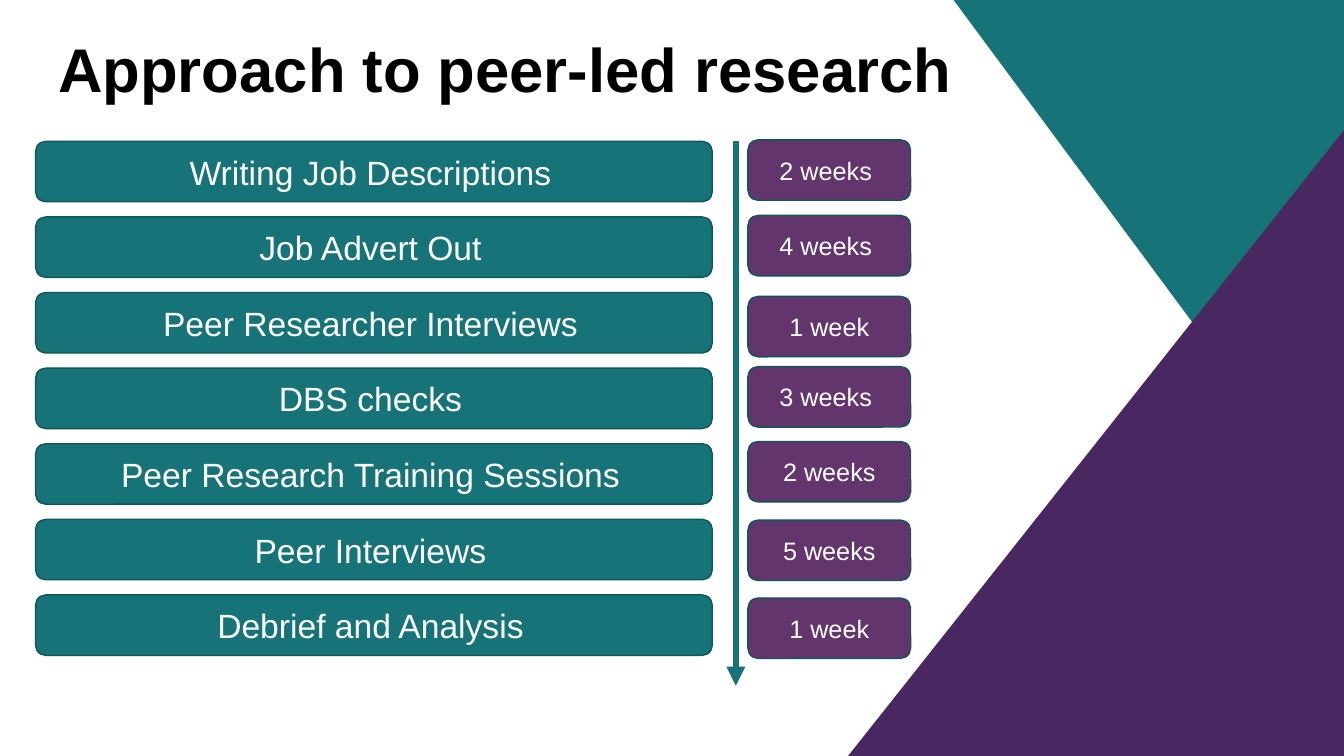
import pptx
import pptx.dml.color
import pptx.enum.shapes
import pptx.enum.text
import pptx.oxml.ns
import pptx.util
from lxml import etree

SHAPES = pptx.enum.shapes.MSO_SHAPE
ALIGN = pptx.enum.text.PP_ALIGN
TEAL, DARK_TEAL = "167378", "105559"
PLUM, INDIGO = "62356D", "492861"
WHITE, BLACK = "FFFFFF", "000000"


def colour(value):
    return pptx.dml.color.RGBColor.from_string(value)


class Board:
    font = "Arial"
    columns = 20
    rows = 10

    def __init__(self, deck):
        self.slide = deck.slides.add_slide(deck.slide_layouts[6])
        self.column = deck.slide_width / self.columns
        self.row = deck.slide_height / self.rows

    def x(self, columns):
        return round(columns * self.column)

    def y(self, rows):
        return round(rows * self.row)

    def box(self, left, top, width, height):
        return self.x(left), self.y(top), self.x(width), self.y(height)

    def paint(self, shape, fill, outline=None):
        shape.shadow.inherit = False
        shape.fill.solid()
        shape.fill.fore_color.rgb = colour(fill)
        if outline:
            shape.line.color.rgb = colour(outline)
            shape.line.width = pptx.util.Pt(1)
        else:
            shape.line.fill.background()

    def label(self, shape, runs, ink, align, bold=False):
        frame = shape.text_frame
        frame.word_wrap = True
        frame.vertical_anchor = pptx.enum.text.MSO_ANCHOR.MIDDLE
        paragraph = frame.paragraphs[0]
        paragraph.alignment = align
        for words, size in runs:
            run = paragraph.add_run()
            run.text = words
            run.font.name = self.font
            run.font.size = pptx.util.Pt(size)
            run.font.bold = bold
            run.font.color.rgb = colour(ink)
        return paragraph

    def corner(self, place, fill):
        triangle = self.slide.shapes.add_shape(SHAPES.RIGHT_TRIANGLE, *self.box(*place))
        triangle.rotation = 180
        self.paint(triangle, fill)

    def polygon(self, points, fill):
        start, *others = [(self.x(across), self.y(down)) for across, down in points]
        builder = self.slide.shapes.build_freeform(*start)
        builder.add_line_segments(others)
        self.paint(builder.convert_to_shape(), fill)

    def title(self, place, words):
        heading = self.slide.shapes.add_textbox(*self.box(*place))
        paragraph = self.label(heading, [(words, 44)], BLACK, ALIGN.LEFT, bold=True)
        paragraph.line_spacing = 0.9

    def pill(self, place, fill, runs):
        pill = self.slide.shapes.add_shape(SHAPES.ROUNDED_RECTANGLE, *self.box(*place))
        self.paint(pill, fill, DARK_TEAL)
        self.label(pill, runs, WHITE, ALIGN.CENTER)

    def arrow(self, across, top, bottom, ink):
        arrow = self.slide.shapes.add_connector(
            pptx.enum.shapes.MSO_CONNECTOR.STRAIGHT,
            self.x(across), self.y(top), self.x(across), self.y(bottom))
        arrow.line.color.rgb = colour(ink)
        arrow.line.width = pptx.util.Pt(4.5)
        qn = pptx.oxml.ns.qn
        properties = arrow._element.spPr
        outline = properties.find(qn("a:ln"))
        etree.SubElement(outline, qn("a:tailEnd"), type="triangle")
        etree.SubElement(properties, qn("a:effectLst"))


def main():
    deck = pptx.Presentation()
    deck.slide_width = pptx.util.Inches(13.33)
    deck.slide_height = pptx.util.Inches(7.5)
    board = Board(deck)

    board.corner((14.19, 0, 5.81, 6.97), TEAL)
    board.polygon([(20, 10), (12.62, 10), (20, 1.72)], INDIGO)
    board.title((0.72, 0.08, 15, 1.75), "Approach to peer-led research")

    first_row, pill_height = 1.87, 0.8
    stages = [
        "Writing Job Descriptions",
        "Job Advert Out",
        "Peer Researcher Interviews",
        "DBS checks",
        "Peer Research Training Sessions",
        "Peer Interviews",
        "Debrief and Analysis",
    ]
    for number, stage in enumerate(stages):
        place = (0.53, first_row + number, 10.07, pill_height)
        board.pill(place, TEAL, [(stage, 24), (" ", 18)])

    board.arrow(10.95, first_row, 9.07, TEAL)

    durations = [
        ("2 weeks ", 1.85),
        ("4 weeks ", 2.85),
        ("1 week", 3.92),
        ("3 weeks ", 4.85),
        ("2 weeks", 5.84),
        ("5 weeks", 6.88),
        ("1 week", 7.91),
    ]
    for duration, top in durations:
        board.pill((11.13, top, 2.42, pill_height), PLUM, [(duration, 18)])

    deck.save("out.pptx")


if __name__ == "__main__":
    main()
